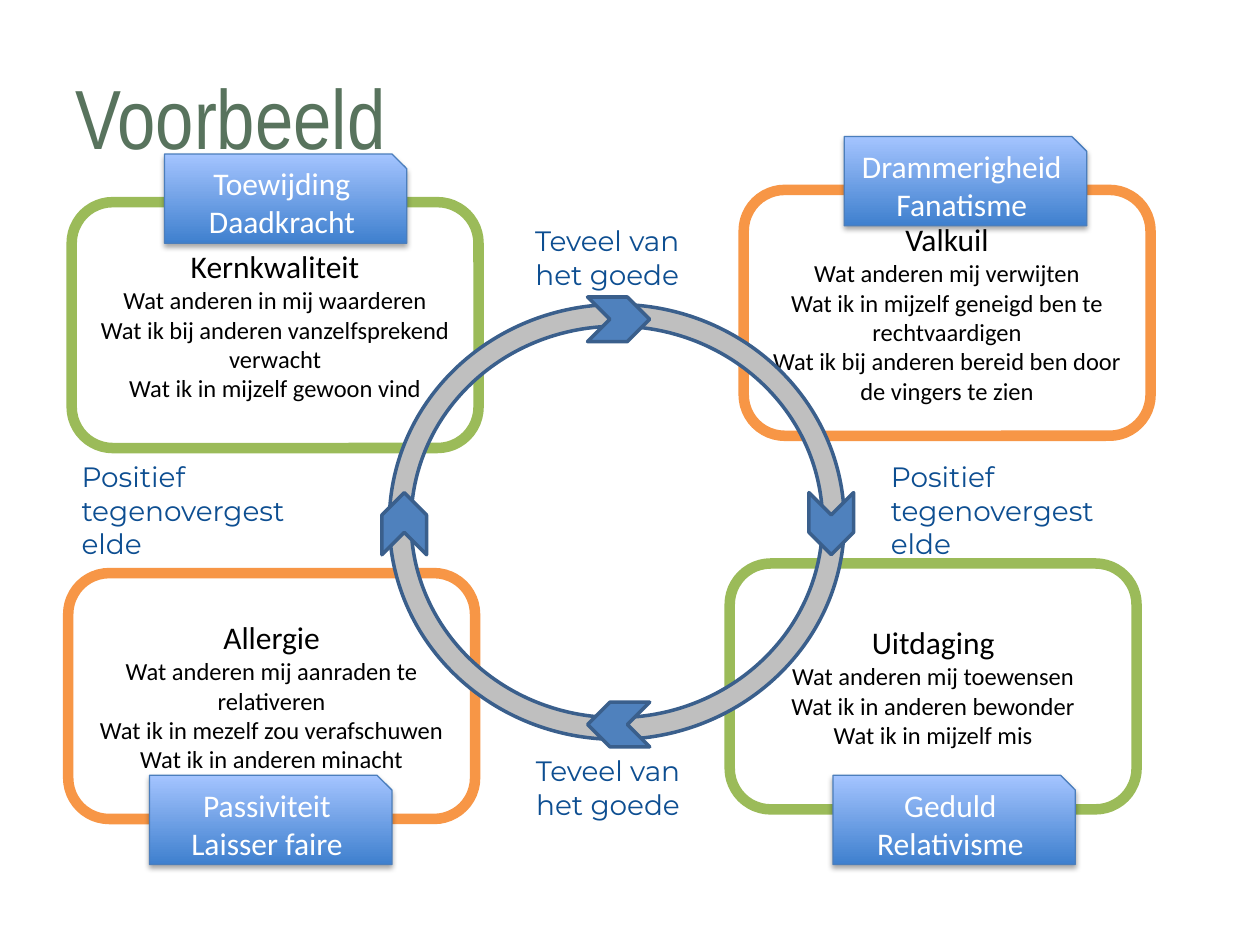
from lxml import etree
from pptx import Presentation
from pptx.dml.color import RGBColor
from pptx.enum.shapes import MSO_SHAPE
from pptx.enum.text import MSO_ANCHOR, PP_ALIGN
from pptx.oxml.ns import qn
from pptx.util import Pt

ROUND, SNIP = MSO_SHAPE.ROUNDED_RECTANGLE, MSO_SHAPE.SNIP_1_RECTANGLE
DONUT, CHEVRON = MSO_SHAPE.DONUT, MSO_SHAPE.CHEVRON
LEFT, CENTER = PP_ALIGN.LEFT, PP_ALIGN.CENTER
MIDDLE = MSO_ANCHOR.MIDDLE

WHITE = RGBColor(0xFF, 0xFF, 0xFF)
BLACK = RGBColor(0, 0, 0)
MOSS = RGBColor(0x58, 0x73, 0x5D)
GREEN = RGBColor(0x9B, 0xBB, 0x59)
ORANGE = RGBColor(0xF7, 0x96, 0x46)
NAVY = RGBColor(0x0D, 0x4E, 0x91)
GRAY = RGBColor(0xBF, 0xBF, 0xBF)
BLUE = RGBColor(0x4F, 0x81, 0xBD)
EDGE = RGBColor(0x3A, 0x5F, 0x8C)
RIM = RGBColor(0x4B, 0x7E, 0xBC)
DEEP = RGBColor(0x3F, 0x80, 0xCE)
PALE = RGBColor(0xA4, 0xC4, 0xFF)

FRAME_W, FRAME_H = 232.5, 140.5
TAG_W, TAG_H = 138.5, 51

# Frame corner, colour, heading, lines; tag corner and words
CARDS = [
    ((41, 115.5), GREEN, "Kernkwaliteit",
     ["Wat anderen in mij waarderen",
      "Wat ik bij anderen vanzelfsprekend verwacht",
      "Wat ik in mijzelf gewoon vind"],
     (94, 88), ["Toewijding", "Daadkracht"]),
    ((425, 108.5), ORANGE, "Valkuil",
     ["Wat anderen mij verwijten",
      "Wat ik in mijzelf geneigd ben te rechtvaardigen",
      "Wat ik bij anderen bereid ben door de vingers te zien"],
     (482.5, 78), ["Drammerigheid", "Fanatisme"]),
    ((417, 322), GREEN, "Uitdaging",
     ["Wat anderen mij toewensen",
      "Wat ik in anderen bewonder",
      "Wat ik in mijzelf mis"],
     (476, 443), ["Geduld", "Relativisme"]),
    ((39, 327.5), ORANGE, "Allergie",
     ["Wat anderen mij aanraden te relativeren",
      "Wat ik in mezelf zou verafschuwen",
      "Wat ik in anderen minacht"],
     (85.5, 443), ["Passiviteit", "Laisser faire"]),
]
MUCH = ["Teveel van", "het goede"]
CONTRA = ["Positief", "tegenovergestelde"]
NOTES = [
    ((277, 111, 140, 72), MUCH, CENTER),
    ((502, 255.5, 137, 72), CONTRA, LEFT),
    ((278, 414, 139, 72), MUCH, CENTER),
    ((39.5, 255.5, 137, 72), CONTRA, LEFT),
]


def write(shape, lines, font, color, align=CENTER, wrap=True):
    """Fill a shape with (text, size) lines."""
    frame = shape.text_frame
    frame.word_wrap = wrap
    frame.vertical_anchor = MIDDLE
    for i, (text, size) in enumerate(lines):
        para = frame.add_paragraph() if i else frame.paragraphs[0]
        para.alignment = align
        run = para.add_run()
        run.text = text
        run.font.name = font
        run.font.size = Pt(size)
        run.font.color.rgb = color


def draw(slide, kind, box, fill, edge, width):
    shape = slide.shapes.add_shape(kind, *map(Pt, box))
    shape.shadow.inherit = False
    if fill is not None:
        shape.fill.solid()
        shape.fill.fore_color.rgb = fill
    shape.line.color.rgb = edge
    shape.line.width = Pt(width)
    return shape


def label(slide, box, lines, font, color, align, wrap):
    shape = slide.shapes.add_textbox(*map(Pt, box))
    write(shape, lines, font, color, align, wrap)


def card(slide, box, color, head, lines):
    shape = draw(slide, ROUND, box, WHITE, color, 6)
    write(shape, [(head, 18)] + [(line, 14) for line in lines],
          "Calibri", BLACK)


def shade(shape):
    """Add a soft shadow that falls straight down."""
    effects = shape._element.spPr.find(qn("a:effectLst"))
    outer = etree.SubElement(
        effects, qn("a:outerShdw"), blurRad=str(Pt(3.1)), dist=str(Pt(1.8)),
        dir="5400000", rotWithShape="0")
    tone = etree.SubElement(outer, qn("a:srgbClr"), val=str(BLACK))
    etree.SubElement(tone, qn("a:alpha"), val="35000")


def tag(slide, box, words):
    shape = draw(slide, SNIP, box, None, RIM, 0.75)
    shape.fill.gradient()
    shape.fill.gradient_angle = 90
    for stop, color, place in zip(shape.fill.gradient_stops,
                                  (DEEP, PALE), (0, 1)):
        stop.color.rgb = color
        stop.position = place
    shade(shape)
    write(shape, [(word, 18) for word in words], "Calibri", WHITE)


def ring(slide, box):
    """Draw the ring with a chevron at each quarter, clockwise from the top."""
    donut = draw(slide, DONUT, box, GRAY, EDGE, 2)
    donut.adjustments[0] = 0.05
    x, y, w, h = box
    wide, high, inset = 35.5, 25.5, 8.5
    mid_x, mid_y = x + w / 2 + 1, y + h / 2 + 1
    spots = [(mid_x, y + inset), (x + w - inset + 1, mid_y),
             (mid_x, y + h - inset), (x + inset, mid_y)]
    for i, (cx, cy) in enumerate(spots):
        arrow = draw(slide, CHEVRON,
                     (cx - wide / 2, cy - high / 2, wide, high),
                     BLUE, EDGE, 2)
        arrow.rotation = 90 * i


def main():
    deck = Presentation()
    deck.slide_width, deck.slide_height = Pt(720), Pt(540)
    slide = deck.slides.add_slide(deck.slide_layouts[6])

    # Title
    label(slide, (36, 21.5, 592.5, 90), [("Voorbeeld", 48)],
          "Arial Narrow", MOSS, LEFT, True)
    # Quadrants
    for spot, color, head, lines, _, _ in CARDS:
        card(slide, (*spot, FRAME_W, FRAME_H), color, head, lines)
    # Captions between the quadrants
    for box, words, align in NOTES:
        label(slide, box, [(word, 16) for word in words],
              "Montserrat", NAVY, align, False)
    # Cycle
    ring(slide, (222.5, 174, 260, 248.5))
    # Example tags
    for *_, spot, words in CARDS:
        tag(slide, (*spot, TAG_W, TAG_H), words)

    deck.save("out.pptx")


if __name__ == "__main__":
    main()
